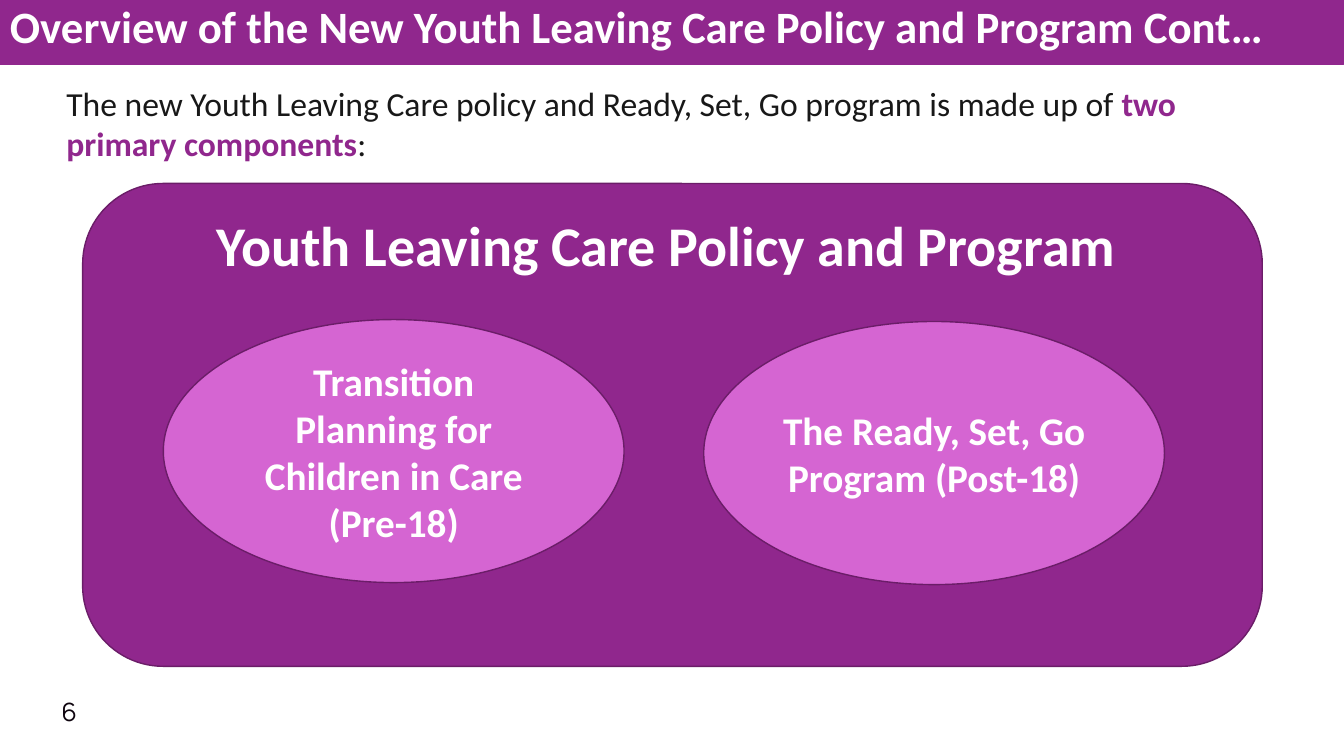
"""Build the slide on the two components of the youth leaving care policy."""
from dataclasses import dataclass
from typing import Optional

from pptx import Presentation
from pptx.dml.color import RGBColor
from pptx.enum.shapes import MSO_SHAPE
from pptx.enum.text import MSO_ANCHOR, PP_ALIGN
from pptx.slide import Slide
from pptx.util import Inches, Pt

WIDTH, HEIGHT = Inches(13.33), Inches(7.5)


@dataclass(frozen=True)
class Theme:
    purple: str = "90278D"
    plum: str = "6B1D68"
    orchid: str = "D565D2"
    white: str = "FFFFFF"
    ink: str = "181818"
    number_ink: str = "0E040E"
    body_font: str = "Calibri"
    number_font: str = "Manrope"
    title_size: float = 32
    heading_size: float = 40
    component_size: float = 28
    intro_size: float = 24
    number_size: float = 18


THEME = Theme()


@dataclass(frozen=True)
class Area:
    """Percentages of the slide's width and height."""
    left: float
    top: float
    width: float
    height: float

    def emu(self) -> tuple[int, int, int, int]:
        return (round(WIDTH * self.left / 100), round(HEIGHT * self.top / 100),
                round(WIDTH * self.width / 100), round(HEIGHT * self.height / 100))


@dataclass(frozen=True)
class Run:
    text: str
    color: str = THEME.white
    bold: bool = True


@dataclass(frozen=True)
class Text:
    runs: tuple[Run, ...]
    size: float
    font: str = THEME.body_font
    align: PP_ALIGN = PP_ALIGN.CENTER
    anchor: MSO_ANCHOR = MSO_ANCHOR.TOP
    spacing: float = 1.0


@dataclass(frozen=True)
class Block:
    area: Area
    text: Optional[Text] = None
    shape: Optional[MSO_SHAPE] = None
    fill: str = THEME.purple
    line: str = THEME.plum
    line_width: float = 1


def component(left: float, top: float, label: str) -> Block:
    return Block(Area(left, top, 34.28, 34.8),
                 Text((Run(label),), THEME.component_size, anchor=MSO_ANCHOR.MIDDLE),
                 MSO_SHAPE.OVAL, fill=THEME.orchid)


BLOCKS = (
    Block(Area(0, 0, 100, 8.53),
          Text((Run("Overview of the New Youth Leaving Care Policy and Program Cont…"),),
               THEME.title_size, align=PP_ALIGN.LEFT, spacing=0.9),
          MSO_SHAPE.RECTANGLE, line=THEME.purple, line_width=0.75),
    Block(Area(3.83, 91.47, 4.2, 5.33),
          Text((Run("6", THEME.number_ink, False),), THEME.number_size,
               THEME.number_font, PP_ALIGN.LEFT, MSO_ANCHOR.MIDDLE)),
    Block(Area(4.2, 10.27, 89.65, 12.13),
          Text((Run("The new Youth Leaving Care policy and Ready, Set, Go program "
                    "is made up of ", THEME.ink, False),
                Run("two primary components", THEME.purple),
                Run(":", THEME.ink, False)),
               THEME.intro_size, align=PP_ALIGN.LEFT)),
    Block(Area(6.15, 24.27, 87.77, 63.87), shape=MSO_SHAPE.ROUNDED_RECTANGLE),
    Block(Area(14.63, 27.2, 70.82, 10.27),
          Text((Run("Youth Leaving Care Policy and Program "),), THEME.heading_size)),
    component(12.15, 42.27, "Transition Planning for Children in Care (Pre-18)"),
    component(52.36, 42.53, "The Ready, Set, Go Program (Post-18)"),
)


def write(tf, text: Text) -> None:
    tf.word_wrap = True
    tf.vertical_anchor = text.anchor
    p = tf.paragraphs[0]
    p.alignment = text.align
    p.line_spacing = text.spacing
    for run in text.runs:
        r = p.add_run()
        r.text = run.text
        r.font.name = text.font
        r.font.size = Pt(text.size)
        r.font.bold = run.bold
        r.font.color.rgb = RGBColor.from_string(run.color)


def draw(s: Slide, block: Block) -> None:
    if block.shape is None:
        sp = s.shapes.add_textbox(*block.area.emu())
    else:
        sp = s.shapes.add_shape(block.shape, *block.area.emu())
        sp.shadow.inherit = False
        sp.fill.solid()
        sp.fill.fore_color.rgb = RGBColor.from_string(block.fill)
        sp.line.color.rgb = RGBColor.from_string(block.line)
        sp.line.width = Pt(block.line_width)
    if block.text:
        write(sp.text_frame, block.text)


def main() -> None:
    prs = Presentation()
    prs.slide_width, prs.slide_height = WIDTH, HEIGHT
    s = prs.slides.add_slide(prs.slide_layouts[6])
    for block in BLOCKS:
        draw(s, block)
    prs.save("out.pptx")


if __name__ == "__main__":
    main()
